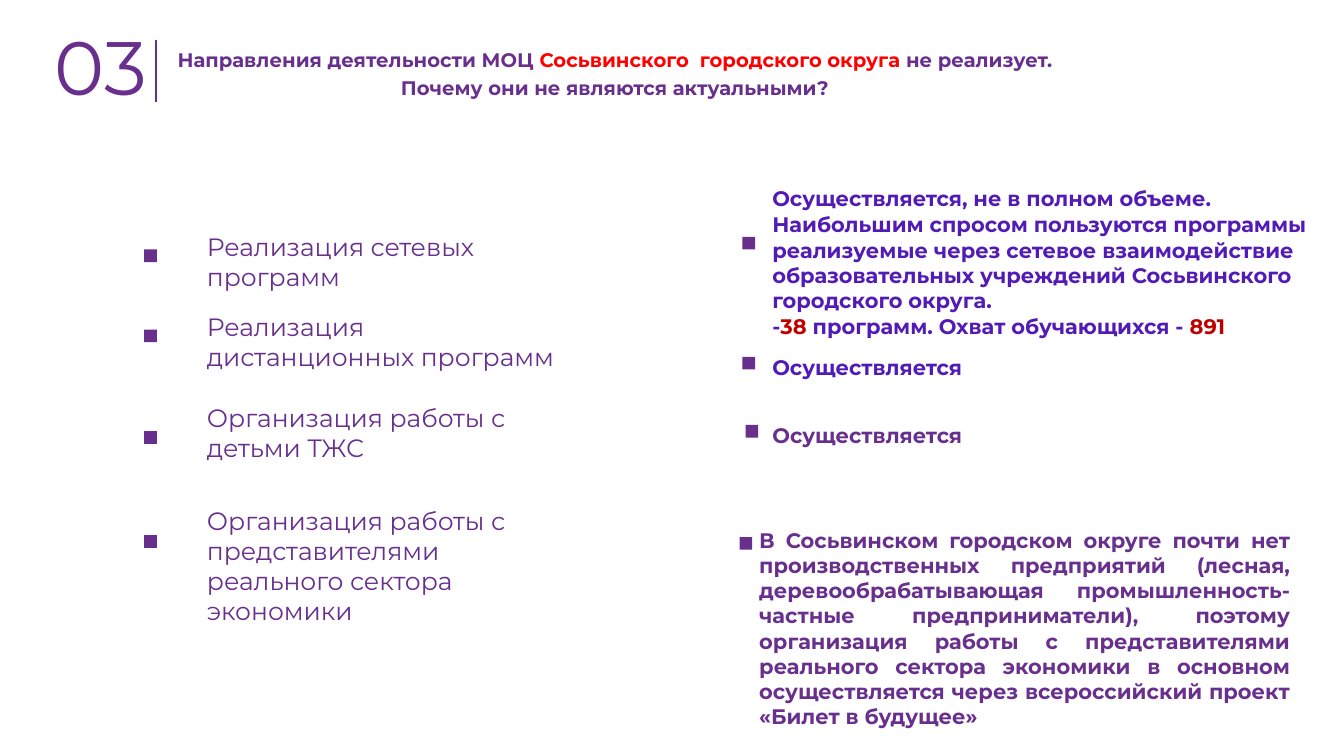
from dataclasses import dataclass

from lxml import etree
from pptx import Presentation
from pptx.dml.color import RGBColor
from pptx.enum.shapes import MSO_CONNECTOR, MSO_SHAPE
from pptx.enum.text import MSO_AUTO_SIZE, PP_ALIGN
from pptx.oxml.ns import qn
from pptx.util import Pt

LEFT, CENTER, JUSTIFY = PP_ALIGN.LEFT, PP_ALIGN.CENTER, PP_ALIGN.JUSTIFY
FIT_SHAPE = MSO_AUTO_SIZE.SHAPE_TO_FIT_TEXT
RECTANGLE = MSO_SHAPE.RECTANGLE
STRAIGHT = MSO_CONNECTOR.STRAIGHT


@dataclass(frozen=True)
class Theme:
    font: str = "Montserrat"
    purple: str = "682F8D"
    violet: str = "521BB5"
    red: str = "FF0000"
    dark_red: str = "C00000"
    number_size: float = 54
    title_size: float = 14
    direction_size: float = 17.9
    answer_size: float = 15


THEME = Theme()

# A paragraph is a list of runs; a run is a text or a (text, colour) pair.
SECTION_NUMBER = [["03"]]
TITLE = [
    ["Направления деятельности МОЦ ",
     ("Сосьвинского  городского округа", THEME.red),
     " не реализует."],
    ["Почему они не являются актуальными?"],
]

# text, text top, marker top
DIRECTIONS = [
    ("Реализация сетевых программ", 164.2, 178.2),
    ("Реализация дистанционных программ", 221.8, 235.4),
    ("Организация работы с детьми ТЖС", 286.6, 308),
    ("Организация работы с представителями реального сектора экономики",
     360.4, 382.3),
]

# paragraphs, colour, alignment, text box, marker left and top
ANSWERS = [
    ([["Осуществляется, не в полном объеме."],
      ["Наибольшим спросом пользуются программы реализуемые через сетевое "
       "взаимодействие образовательных учреждений Сосьвинского городского "
       "округа."],
      ["-", ("38", THEME.dark_red), " программ. Охват обучающихся - ",
       ("891", THEME.dark_red)]],
     THEME.violet, LEFT, (550.8, 131.8, 388.8, 111.6), (530.4, 169.2)),
    ([["Осуществляется"]],
     THEME.violet, LEFT, (550.8, 252, 296, 18.7), (530.4, 254.9)),
    ([["Осуществляется"]],
     THEME.purple, LEFT, (550.8, 301, 370, 18.7), (532.6, 303.6)),
    ([["В Сосьвинском городском округе почти нет производственных предприятий "
       "(лесная, деревообрабатывающая промышленность-частные предприниматели), "
       "поэтому организация работы с представителями реального сектора "
       "экономики в основном осуществляется через всероссийский проект "
       "«Билет в будущее»"]],
     THEME.purple, JUSTIFY, (541.4, 375.8, 380.2, 128.2), (528.3, 383.6)),
]

MARKER_SIDE = 9
DIRECTION_MARKER_LEFT = 103
DIRECTION_LEFT, DIRECTION_WIDTH, DIRECTION_HEIGHT = 146.9, 262, 44


def add_text(slide, box, paragraphs, size, color=THEME.purple, bold=False,
             align=LEFT, line_spacing=None):
    frame = slide.shapes.add_textbox(*map(Pt, box)).text_frame
    frame.word_wrap = True
    frame.auto_size = FIT_SHAPE
    frame.margin_left = frame.margin_top = Pt(0.9)
    frame.margin_right = frame.margin_bottom = Pt(0)
    for index, runs in enumerate(paragraphs):
        paragraph = frame.add_paragraph() if index else frame.paragraphs[0]
        paragraph.alignment = align
        if index:
            paragraph.space_before = Pt(0.6)
        if line_spacing:
            paragraph.line_spacing = line_spacing
        font = paragraph.font
        font.name, font.size, font.bold = THEME.font, Pt(size), bold
        font.color.rgb = RGBColor.from_string(color)
        for entry in runs:
            words, accent = (entry, None) if isinstance(entry, str) else entry
            run = paragraph.add_run()
            run.text = words
            if accent:
                run.font.color.rgb = RGBColor.from_string(accent)


def add_marker(slide, left, top):
    marker = slide.shapes.add_shape(
        RECTANGLE, Pt(left), Pt(top), Pt(MARKER_SIDE), Pt(MARKER_SIDE))
    marker.shadow.inherit = False
    marker.fill.solid()
    marker.fill.fore_color.rgb = RGBColor.from_string(THEME.purple)
    marker.line.fill.background()


def add_header(slide):
    divider = slide.shapes.add_connector(
        STRAIGHT, Pt(111.6), Pt(28.8), Pt(111.6), Pt(72.7))
    divider.line.color.rgb = RGBColor.from_string(THEME.purple)
    divider.line.width = Pt(1.42)
    etree.SubElement(divider._element.spPr, qn("a:effectLst"))
    add_text(slide, (38.2, 13, 74.2, 66.2), SECTION_NUMBER, THEME.number_size)
    add_text(slide, (122.4, 31, 632.9, 39.6), TITLE, THEME.title_size,
             bold=True, align=CENTER, line_spacing=1.15)


def main():
    presentation = Presentation()
    presentation.slide_width, presentation.slide_height = Pt(960), Pt(540)
    slide = presentation.slides.add_slide(presentation.slide_layouts[6])
    add_header(slide)
    for direction, top, marker_top in DIRECTIONS:
        add_marker(slide, DIRECTION_MARKER_LEFT, marker_top)
        add_text(slide,
                 (DIRECTION_LEFT, top, DIRECTION_WIDTH, DIRECTION_HEIGHT),
                 [[direction]], THEME.direction_size)
    for answer, color, align, box, marker_at in ANSWERS:
        add_marker(slide, *marker_at)
        add_text(slide, box, answer, THEME.answer_size, color, True, align)
    presentation.save("out.pptx")


if __name__ == "__main__":
    main()
